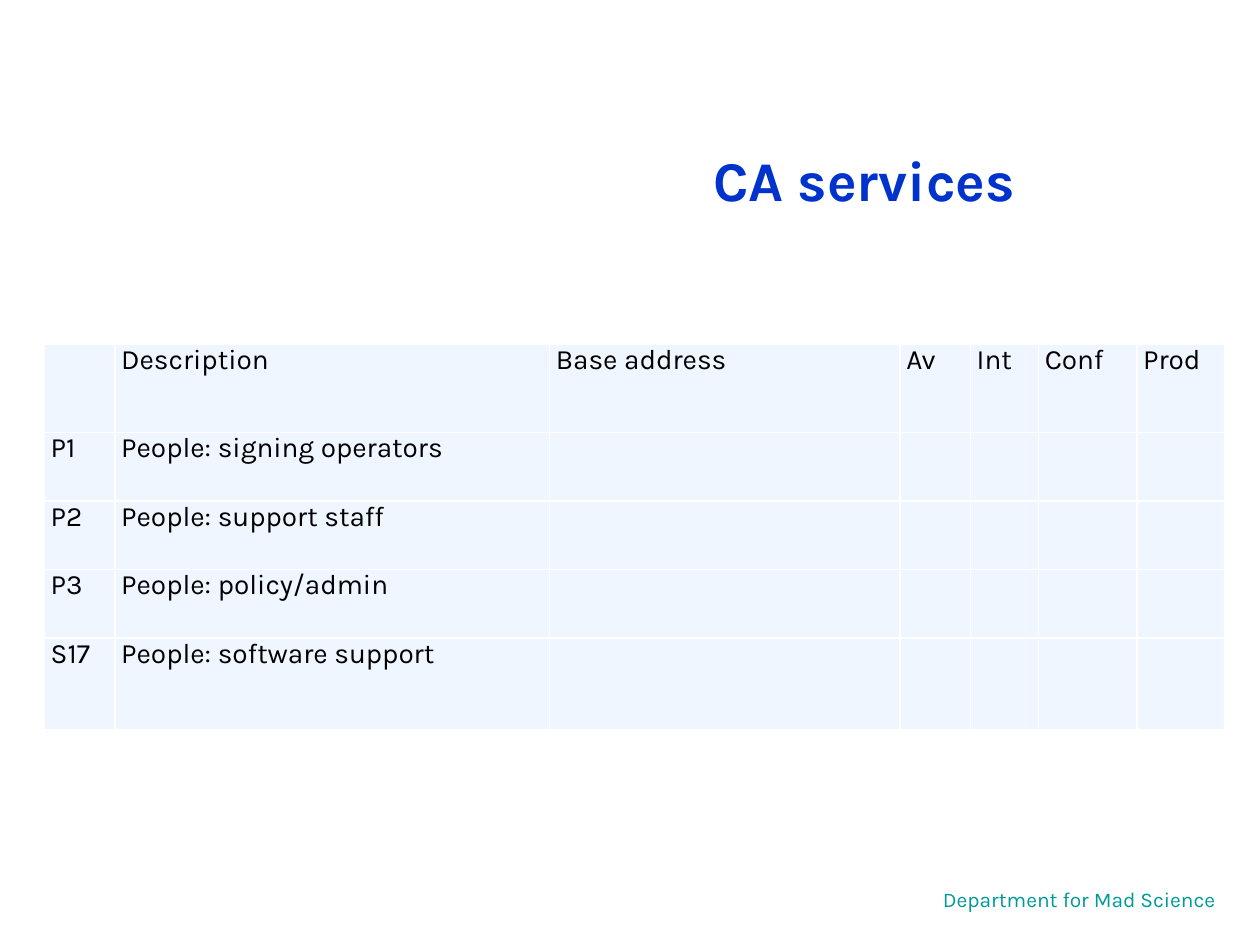
"""Build the CA services slide with its table of people and ratings."""
import dataclasses

import lxml.etree
import pptx
import pptx.dml.color
import pptx.enum.text
import pptx.oxml.ns
import pptx.util

Pt = pptx.util.Pt
RGB = pptx.dml.color.RGBColor.from_string
ALIGN = pptx.enum.text.PP_ALIGN
ANCHOR = pptx.enum.text.MSO_ANCHOR


@dataclasses.dataclass(frozen=True)
class Theme:
    face: str = "Karla"
    title: str = "0033CC"
    foot: str = "009999"
    ink: str = "000000"
    cell: str = "EFF6FF"
    rule: str = "FFFFFF"
    big: float = 32
    mid: float = 16
    small: float = 12


def apply(item, values):
    for name, value in values.items():
        setattr(item, name, value)


class Deck:
    def __init__(self, theme):
        self.theme = theme
        self.show = pptx.Presentation()
        apply(self.show, {"slide_width": Pt(720), "slide_height": Pt(540)})
        self.slide = self.show.slides.add_slide(self.show.slide_layouts[6])

    def style(self, para, text, size, color, bold=False, **layout):
        para.text = text
        apply(para, layout)
        apply(para.font, {"name": self.theme.face, "size": Pt(size), "bold": bold})
        para.font.color.rgb = RGB(color)

    def label(self, area, text, size, color, bold=False, anchor=ANCHOR.TOP):
        frame = self.slide.shapes.add_textbox(*map(Pt, area)).text_frame
        apply(frame, {"word_wrap": True, "vertical_anchor": anchor})
        self.style(frame.paragraphs[0], text, size, color, bold, alignment=ALIGN.CENTER)

    def border(self, cell):
        props = cell._tc.get_or_add_tcPr()
        qn = pptx.oxml.ns.qn
        for side in "LRTB":
            line = lxml.etree.SubElement(props, qn(f"a:ln{side}"), w=str(Pt(1)))
            fill = lxml.etree.SubElement(line, qn("a:solidFill"))
            lxml.etree.SubElement(fill, qn("a:srgbClr"), val=self.theme.rule)

    def table(self, left, top, widths, heights, rows):
        area = map(Pt, (left, top, sum(widths), sum(heights)))
        grid = self.slide.shapes.add_table(len(heights), len(widths), *area).table
        apply(grid, {"first_row": False, "horz_banding": False})
        for col, width in zip(grid.columns, widths):
            col.width = Pt(width)
        for row, height, texts in zip(grid.rows, heights, rows):
            row.height = Pt(height)
            for index, cell in enumerate(row.cells):
                apply(cell, {"margin_left": Pt(3.6), "margin_right": Pt(3.6),
                             "margin_top": 0, "margin_bottom": 0})
                self.border(cell)
                cell.fill.solid()
                cell.fill.fore_color.rgb = RGB(self.theme.cell)
                text = texts[index] if index < len(texts) else ""
                self.style(cell.text_frame.paragraphs[0], text, self.theme.mid,
                           self.theme.ink, space_after=Pt(12))


def main():
    theme = Theme()
    deck = Deck(theme)
    deck.label((513.4, 503.3, 206.6, 21.6), "Department for Mad Science",
               theme.small, theme.foot)
    deck.label((280.8, 60.5, 426.2, 84.2), "CA services", theme.big, theme.title,
               True, ANCHOR.MIDDLE)
    rows = [
        ("", "Description", "Base address", "Av", "Int", "Conf", "Prod"),
        ("P1", "People: signing operators"),
        ("P2", "People: support staff"),
        ("P3", "People: policy/admin"),
        ("S17", "People: software support"),
    ]
    widths = [40.3, 248.4, 200.2, 40.3, 38.9, 56.2, 50.4]
    heights = [50.4, *[39.2] * 3, 52.6]
    deck.table(25.4, 196.6, widths, heights, rows)
    deck.show.save("out.pptx")


if __name__ == "__main__":
    main()
